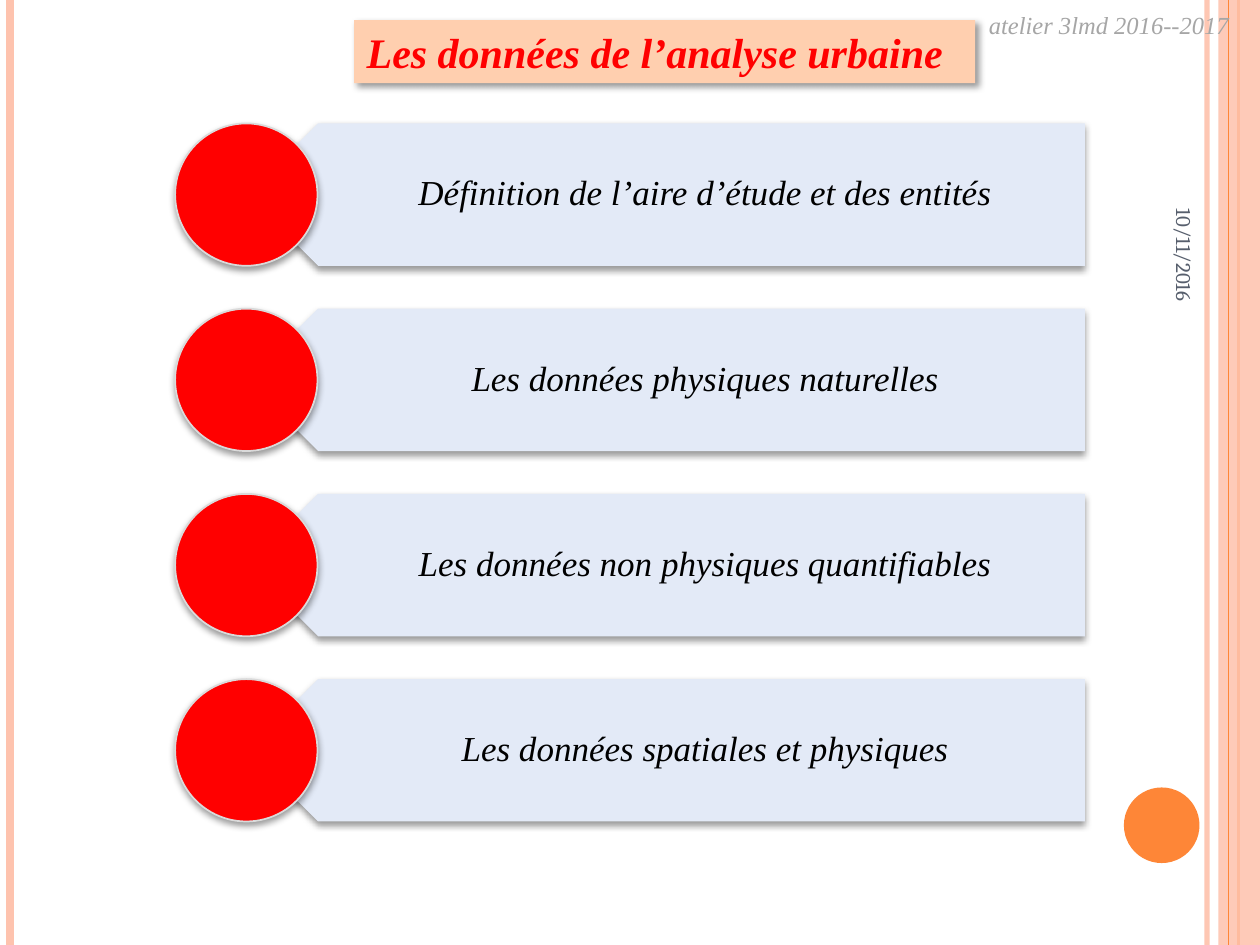
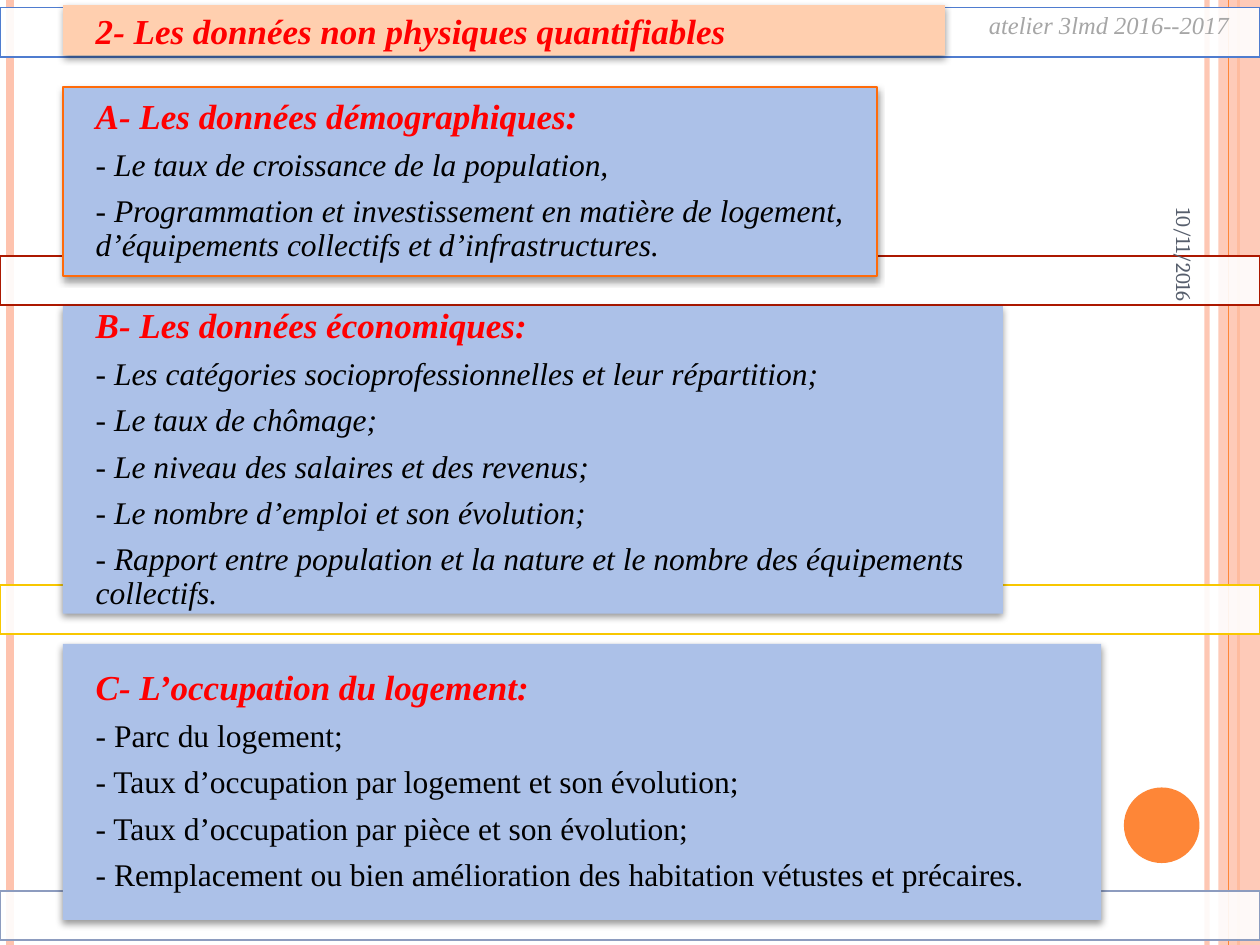
from lxml import etree
from pptx import Presentation
from pptx.dml.color import RGBColor
from pptx.enum.shapes import MSO_CONNECTOR, MSO_SHAPE
from pptx.enum.text import MSO_ANCHOR, MSO_AUTO_SIZE, PP_ALIGN
from pptx.oxml.ns import qn
from pptx.util import Inches, Pt

RECTANGLE = MSO_SHAPE.RECTANGLE
OVAL = MSO_SHAPE.OVAL
PENTAGON = MSO_SHAPE.PENTAGON
STRAIGHT = MSO_CONNECTOR.STRAIGHT
MIDDLE = MSO_ANCHOR.MIDDLE
NO_FIT = MSO_AUTO_SIZE.NONE
LEFT, CENTER, RIGHT = PP_ALIGN.LEFT, PP_ALIGN.CENTER, PP_ALIGN.RIGHT

SERIF = "Times New Roman"
RED = "FF0000"
BLACK = "000000"
WHITE = "FFFFFF"
PEACH = "FFCFAF"
SALMON = "FEC3AE"
ORANGE = "FE8637"
PALE_BLUE = "E3EAF7"
PANEL_BLUE = "ACC1E8"

RAILS = [(9.58, SALMON, 3, 93), (0.08, SALMON, 4.5, 100), (9.83, ORANGE, 1.5, 100)]
INNER_RAIL = (9.75, ORANGE, 0.75, 100)

DATA_KINDS = [
    "Définition de l’aire d’étude et des entités",
    "Les données physiques naturelles",
    "Les données non physiques quantifiables",
    "Les données spatiales et physiques",
]
BANDS = [(0.06, "4F7CCF"), (2.03, "AC1800"), (4.64, "F8C700"), (7.07, "8D9CBF")]
PANELS = [
    ((0.5, 0.69, 6.46, 1.5), "FF6B0A", True, [
        "A- Les données démographiques:",
        "- Le taux de croissance de la population,",
        "- Programmation et investissement en matière de logement, "
        "d’équipements collectifs et d’infrastructures.",
    ]),
    ((0.5, 2.43, 7.46, 2.44), None, True, [
        "B- Les données économiques:",
        "- Les catégories socioprofessionnelles et leur répartition;",
        "- Le taux de chômage;",
        "- Le niveau des salaires et des revenus;",
        "- Le nombre d’emploi et son évolution;",
        "- Rapport entre population et la nature et le nombre des équipements collectifs.",
    ]),
    ((0.5, 5.11, 8.24, 2.19), None, False, [
        "C- L’occupation du logement:",
        "- Parc du logement;",
        "- Taux d’occupation par logement et son évolution;",
        "- Taux d’occupation par pièce et son évolution;",
        "- Remplacement ou bien amélioration des habitation vétustes et précaires.",
    ]),
]


def color(value):
    return RGBColor.from_string(value)


def set_opacity(element, percent):
    if percent < 100:
        tint = next(element.iter(qn("a:srgbClr")))
        etree.SubElement(tint, qn("a:alpha")).set("val", str(percent * 1000))


def add_shadow(shape, distance=2, angle=90):
    shape.shadow.inherit = False
    effects = shape.element.spPr.find(qn("a:effectLst"))
    shadow = etree.SubElement(effects, qn("a:outerShdw"), {
        "blurRad": str(Pt(4)), "dist": str(Pt(distance)),
        "dir": str(angle * 60000), "rotWithShape": "0"})
    tint = etree.SubElement(shadow, qn("a:srgbClr"), val=BLACK)
    etree.SubElement(tint, qn("a:alpha"), val="40000")


def place(shape, bounds):
    shape.left, shape.top, shape.width, shape.height = map(Inches, bounds)


def paint(shape, fill, line=None, opacity=100):
    shape.fill.solid()
    shape.fill.fore_color.rgb = color(fill)
    set_opacity(shape.element.spPr, opacity)
    if line:
        shape.line.color.rgb = color(line)
        shape.line.width = Pt(1)
    else:
        shape.line.fill.background()


def add_block(page, kind, bounds, fill, line=None, opacity=100):
    shape = page.shapes.add_shape(kind, *map(Inches, bounds))
    shape.shadow.inherit = False
    paint(shape, fill, line, opacity)
    return shape


def add_rail(page, x, tint, width, opacity):
    rail = page.shapes.add_connector(STRAIGHT, Inches(x), 0, Inches(x), Inches(7.5))
    rail.line.color.rgb = color(tint)
    rail.line.width = Pt(width)
    properties = rail.element.spPr
    set_opacity(properties, opacity)
    etree.SubElement(properties, qn("a:effectLst"))
    return rail


def set_frame(shape, margins=(0.1, 0.05, 0.1, 0.05), wrap=True):
    frame = shape.text_frame
    frame.auto_size = NO_FIT
    frame.word_wrap = wrap
    frame.vertical_anchor = MIDDLE
    (frame.margin_left, frame.margin_top,
     frame.margin_right, frame.margin_bottom) = map(Inches, margins)
    return frame


def format_para(para, size, tint, bold=False, italic=True, align=LEFT, font=SERIF):
    para.alignment = align
    for span in para.runs:
        span.font.name = font
        span.font.size = Pt(size)
        span.font.bold = bold
        span.font.italic = italic
        span.font.color.rgb = color(tint)


def space_para(para):
    para.line_spacing = 0.9
    para.space_after = Pt(7)


def add_title(page, text, bounds, size, margins, distance=2, angle=90):
    title = page.shapes.title
    page.shapes.element.append(title.element)
    place(title, bounds)
    paint(title, PEACH)
    add_shadow(title, distance, angle)
    frame = set_frame(title, margins, wrap=False)
    frame.text = text
    format_para(frame.paragraphs[0], size, RED, bold=True)


def add_label(page, text, bounds, rotation=0, **style):
    box = page.shapes.add_textbox(*map(Inches, bounds))
    box.rotation = rotation
    frame = set_frame(box)
    frame.text = text
    format_para(frame.paragraphs[0], **style)


def add_footers(page):
    add_label(page, "atelier 3lmd 2016--2017", (7.75, 0, 2.25, 0.4), size=14, tint="A6A6A6")
    add_label(page, "10/11/2016", (8.3, 1.18, 2.2, 0.42), rotation=90, size=12,
              tint="575F6D", italic=False, align=RIGHT, font="Cambria")


def decorate_layout(layout, page):
    pieces = [add_rail(page, *rail) for rail in RAILS]
    pieces.append(add_block(page, RECTANGLE, (9.67, 0, 0.33, 7.5), SALMON, opacity=87))
    pieces.append(add_rail(page, *INNER_RAIL))
    pieces.append(add_block(page, OVAL, (8.92, 6.25, 0.6, 0.6), ORANGE))
    for number, piece in enumerate(pieces, 101):
        next(piece.element.iter(qn("p:cNvPr"))).set("id", str(number))
        layout.shapes.element.append(piece.element)


def add_data_kind(page, text, top):
    height = 1.13
    arrow = add_block(page, PENTAGON, (1.96, top, 6.65, height), PALE_BLUE)
    arrow.element.spPr.xfrm.set("flipH", "1")
    add_shadow(arrow)
    frame = set_frame(arrow, (0.5, 0.08, 0.16, 0.08))
    frame.text = text
    para = frame.paragraphs[0]
    format_para(para, 20, BLACK, align=CENTER)
    space_para(para)
    add_shadow(add_block(page, OVAL, (1.39, top, height, height), RED, "DADADA"))


def add_panel(page, bounds, line, italic, lines):
    panel = add_block(page, RECTANGLE, bounds, PANEL_BLUE, line)
    add_shadow(panel)
    frame = set_frame(panel, (0.26, 0, 0.26, 0))
    frame.text = "\n".join(lines)
    heading, *items = frame.paragraphs
    format_para(heading, 20, RED, bold=True)
    for item in items:
        format_para(item, 18, BLACK, italic=italic)
    for para in frame.paragraphs:
        space_para(para)


def build_overview(page):
    for index, text in enumerate(DATA_KINDS):
        add_data_kind(page, text, 0.98 + index * 1.47)
    add_title(page, "Les données de l’analyse urbaine", (2.81, 0.16, 4.93, 0.5), 24,
              (0.1, 0.05, 0.1, 0.05), distance=3, angle=45)
    add_footers(page)


def build_details(page):
    for top, line in BANDS:
        add_block(page, RECTANGLE, (0, top, 10, 0.39), WHITE, line, opacity=90)
    add_title(page, "2- Les données non physiques quantifiables", (0.5, 0.04, 7, 0.4), 20,
              (0.26, 0, 0.26, 0))
    for panel in PANELS:
        add_panel(page, *panel)
    add_footers(page)


def main():
    deck = Presentation()
    deck.slide_width, deck.slide_height = Inches(10), Inches(7.5)
    layout = deck.slide_layouts[5]
    overview, details = (deck.slides.add_slide(layout) for _ in range(2))
    decorate_layout(layout, overview)
    build_overview(overview)
    build_details(details)
    deck.save("out.pptx")


if __name__ == "__main__":
    main()
